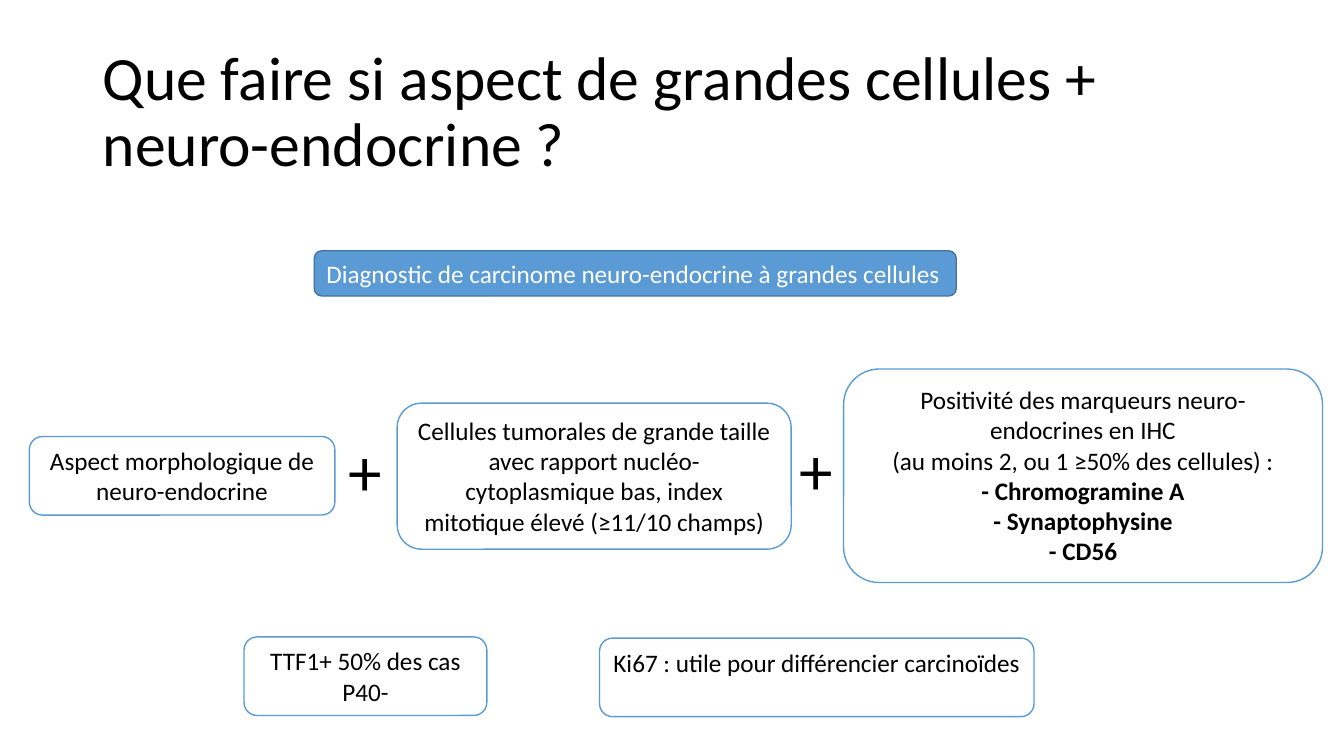
"""Build the slide on large-cell neuro-endocrine carcinoma."""
import dataclasses

import pptx
import pptx.dml.color
import pptx.enum.shapes
import pptx.enum.text
import pptx.util

Cm = pptx.util.Cm
Align = pptx.enum.text.PP_ALIGN
Anchor = pptx.enum.text.MSO_ANCHOR


@dataclasses.dataclass
class Label:
    left: float
    top: float
    width: float
    height: float
    lines: list[str]
    size: int = 18
    color: str = "000000"
    align: Align = Align.LEFT
    anchor: Anchor = Anchor.TOP
    wrap: bool = True
    space: float = 1.0


@dataclasses.dataclass
class Box(Label):
    align: Align = Align.CENTER
    fill: str = "FFFFFF"
    edge: str = "5B9BD5"


LABELS = [
    Label(2.34, 1.02, 29.21, 3.68,
          ["Que faire si aspect de grandes cellules + neuro-endocrine ?"],
          size=44, anchor=Anchor.MIDDLE, space=0.9),
    Label(8.53, 10.69, 1.37, 2.31, ["+"], size=48, wrap=False),
    Label(19.91, 10.67, 1.37, 2.31, ["+"], size=48, wrap=False),
]

BOXES = [
    Box(7.92, 6.32, 16.18, 1.14,
        ["Diagnostic de carcinome neuro-endocrine à grandes cellules"],
        color="FFFFFF", align=Align.LEFT, wrap=False,
        fill="5B9BD5", edge="43739E"),
    Box(0.74, 11, 7.7, 1.98, ["Aspect morphologique de neuro-endocrine"]),
    Box(10.01, 10.16, 9.93, 3.68,
        ["Cellules tumorales de grande taille avec rapport "
         "nucléo-cytoplasmique bas, index mitotique élevé (≥11/10 champs)"]),
    Box(21.26, 9.3, 12.07, 5.38,
        ["Positivité des marqueurs neuro-endocrines en IHC",
         "(au moins 2, ou 1 ≥50% des cellules) :",
         "- Chromogramine A", "- Synaptophysine", "- CD56"]),
    Box(6.15, 16.05, 6.12, 1.98, ["TTF1+ 50% des cas", "P40-"]),
    Box(15.11, 16.08, 10.95, 1.98,
        ["Ki67 : utile pour différencier carcinoïdes"]),
]


def paint(target, color: str) -> None:
    target.rgb = pptx.dml.color.RGBColor.from_string(color)


def place(item: Label) -> tuple:
    return Cm(item.left), Cm(item.top), Cm(item.width), Cm(item.height)


def write(shape, item: Label) -> None:
    frame = shape.text_frame
    frame.word_wrap = item.wrap
    frame.vertical_anchor = item.anchor
    frame.text = "\n".join(item.lines)
    for para in frame.paragraphs:
        para.alignment = item.align
        para.line_spacing = item.space
        para.font.name = "Calibri"
        para.font.size = pptx.util.Pt(item.size)
        para.font.bold = para.text.startswith("- ")
        paint(para.font.color, item.color)


def draw_label(slide, item: Label) -> None:
    write(slide.shapes.add_textbox(*place(item)), item)


def draw_box(slide, item: Box) -> None:
    kind = pptx.enum.shapes.MSO_SHAPE.ROUNDED_RECTANGLE
    shape = slide.shapes.add_shape(kind, *place(item))
    shape.shadow.inherit = False
    shape.fill.solid()
    paint(shape.fill.fore_color, item.fill)
    paint(shape.line.color, item.edge)
    shape.line.width = pptx.util.Pt(1)
    write(shape, item)


def main() -> None:
    deck = pptx.Presentation()
    deck.slide_width = Cm(33.87)
    deck.slide_height = Cm(19.05)
    slide = deck.slides.add_slide(deck.slide_layouts[6])
    for box in BOXES:
        draw_box(slide, box)
    for label in LABELS:
        draw_label(slide, label)
    deck.save("out.pptx")


if __name__ == "__main__":
    main()
